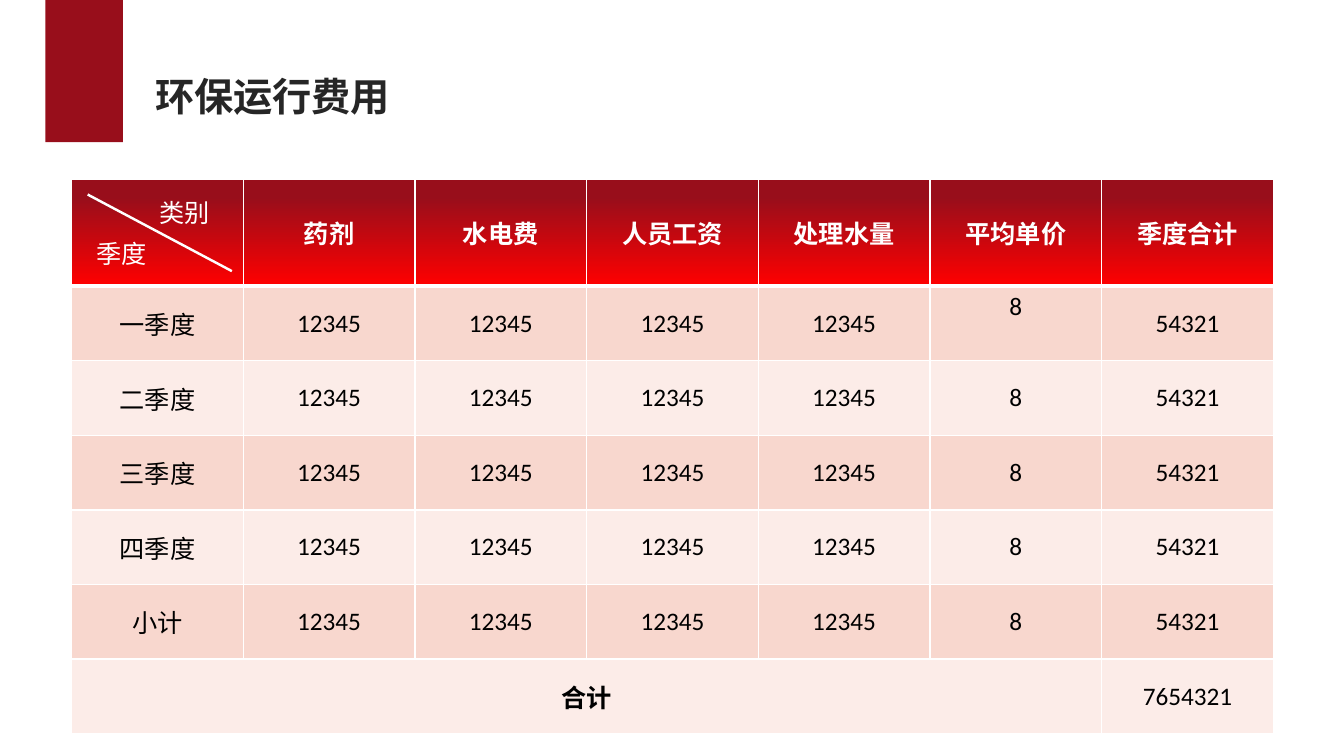
from lxml.etree import SubElement
from pptx import Presentation
from pptx.dml.color import RGBColor
from pptx.enum.shapes import MSO_CONNECTOR, MSO_SHAPE
from pptx.enum.text import MSO_ANCHOR, MSO_AUTO_SIZE, PP_ALIGN
from pptx.oxml.ns import qn
from pptx.util import Inches, Pt

RED, BRIGHT_RED, WHITE, BLACK, GREY = "980E1B", "FF0000", "FFFFFF", "000000", "262626"
BANDS = ["F8D7CE", "FCECE8"]
CJK_FONT, TABLE_FONT = "Noto Sans CJK SC", "Calibri"

# Table grid
LEFT, TOP = 0.71, 1.78
COL_W, HEADER_H, ROW_H = 11.92 / 7, 1.06, 0.74

HEADERS = ["", "药剂", "水电费", "人员工资", "处理水量", "平均单价", "季度合计"]
PERIODS = ["一季度", "二季度", "三季度", "四季度", "小计"]
COSTS = ["12345"] * 4 + ["8", "54321"]
TOTAL = ["合计"] + [""] * 5 + ["7654321"]
ROWS = [HEADERS] + [[period] + COSTS for period in PERIODS] + [TOTAL]


def rgb(color):
    return RGBColor.from_string(color)


def style_text(p, size, font, color, bold=False):
    f = p.font
    f.size, f.name, f.bold = Pt(size), font, bold
    f.color.rgb = rgb(color)


def add_label(s, text, x, y, w, h, size, color, bold=False, wrap=True):
    tf = s.shapes.add_textbox(Inches(x), Inches(y), Inches(w), Inches(h)).text_frame
    tf.word_wrap = wrap
    tf.auto_size = MSO_AUTO_SIZE.SHAPE_TO_FIT_TEXT
    p = tf.paragraphs[0]
    p.text = text
    style_text(p, size, CJK_FONT, color, bold)


def add_block(s, x, y, w, h, color):
    sp = s.shapes.add_shape(MSO_SHAPE.RECTANGLE, Inches(x), Inches(y), Inches(w), Inches(h))
    sp.shadow.inherit = False
    sp.fill.solid()
    sp.fill.fore_color.rgb = rgb(color)
    sp.line.fill.background()


def add_line(s, x1, y1, x2, y2, color, width):
    line = s.shapes.add_connector(
        MSO_CONNECTOR.STRAIGHT, Inches(x1), Inches(y1), Inches(x2), Inches(y2))
    line.line.color.rgb = rgb(color)
    line.line.width = Pt(width)
    SubElement(line._element.spPr, qn("a:effectLst"))


def set_borders(cell, top, bottom):
    tcPr = cell._tc.get_or_add_tcPr()
    for side, width in (("L", 1), ("R", 1), ("T", top), ("B", bottom)):
        ln = SubElement(tcPr, qn(f"a:ln{side}"), w=str(Pt(width)))
        SubElement(SubElement(ln, qn("a:solidFill")), qn("a:srgbClr"), val=WHITE)


def fill_cell(cell, row):
    if row:
        cell.fill.solid()
        cell.fill.fore_color.rgb = rgb(BANDS[(row - 1) % 2])
        return
    cell.fill.gradient()
    cell.fill.gradient_angle = 270
    stops = zip(cell.fill.gradient_stops, (0.17, 1), (RED, BRIGHT_RED))
    for stop, position, color in stops:
        stop.position = position
        stop.color.rgb = rgb(color)


def add_cost_table(s):
    rows, cols = len(ROWS), len(HEADERS)
    heights = [HEADER_H] + [ROW_H] * (rows - 1)
    table = s.shapes.add_table(rows, cols, Inches(LEFT), Inches(TOP),
                               Inches(COL_W * cols), Inches(sum(heights))).table
    table.first_row = table.horz_banding = False
    for column in table.columns:
        column.width = Inches(COL_W)
    for r, values in enumerate(ROWS):
        table.rows[r].height = Inches(heights[r])
        for c, value in enumerate(values):
            cell = table.cell(r, c)
            set_borders(cell, 3 if r == 1 else 1, 3 if r == 0 else 1)
            fill_cell(cell, r)
            cell.vertical_anchor = MSO_ANCHOR.MIDDLE
            p = cell.text_frame.paragraphs[0]
            p.text = value
            p.alignment = PP_ALIGN.CENTER
            style_text(p, 18, TABLE_FONT, BLACK if r else WHITE, r == 0 or value == "合计")
    # The first average price sits at the top of its cell
    table.cell(1, 5).vertical_anchor = MSO_ANCHOR.TOP
    table.cell(rows - 1, 0).merge(table.cell(rows - 1, cols - 2))


def main():
    prs = Presentation()
    prs.slide_width, prs.slide_height = Inches(13.33), Inches(7.5)
    s = prs.slides.add_slide(prs.slide_layouts[6])

    # Title
    add_block(s, 0.45, 0, 0.77, 1.41, RED)
    add_label(s, "环保运行费用", 1.44, 0.67, 2.56, 0.57, 28, GREY, bold=True, wrap=False)

    # Table with a split corner cell
    add_cost_table(s)
    add_line(s, 0.87, 1.93, 2.3, 2.69, WHITE, 1.75)
    add_label(s, "类别", 1.48, 1.91, 0.98, 0.4, 18, WHITE)
    add_label(s, "季度", 0.86, 2.32, 0.98, 0.4, 18, WHITE)

    prs.save("out.pptx")


if __name__ == "__main__":
    main()
